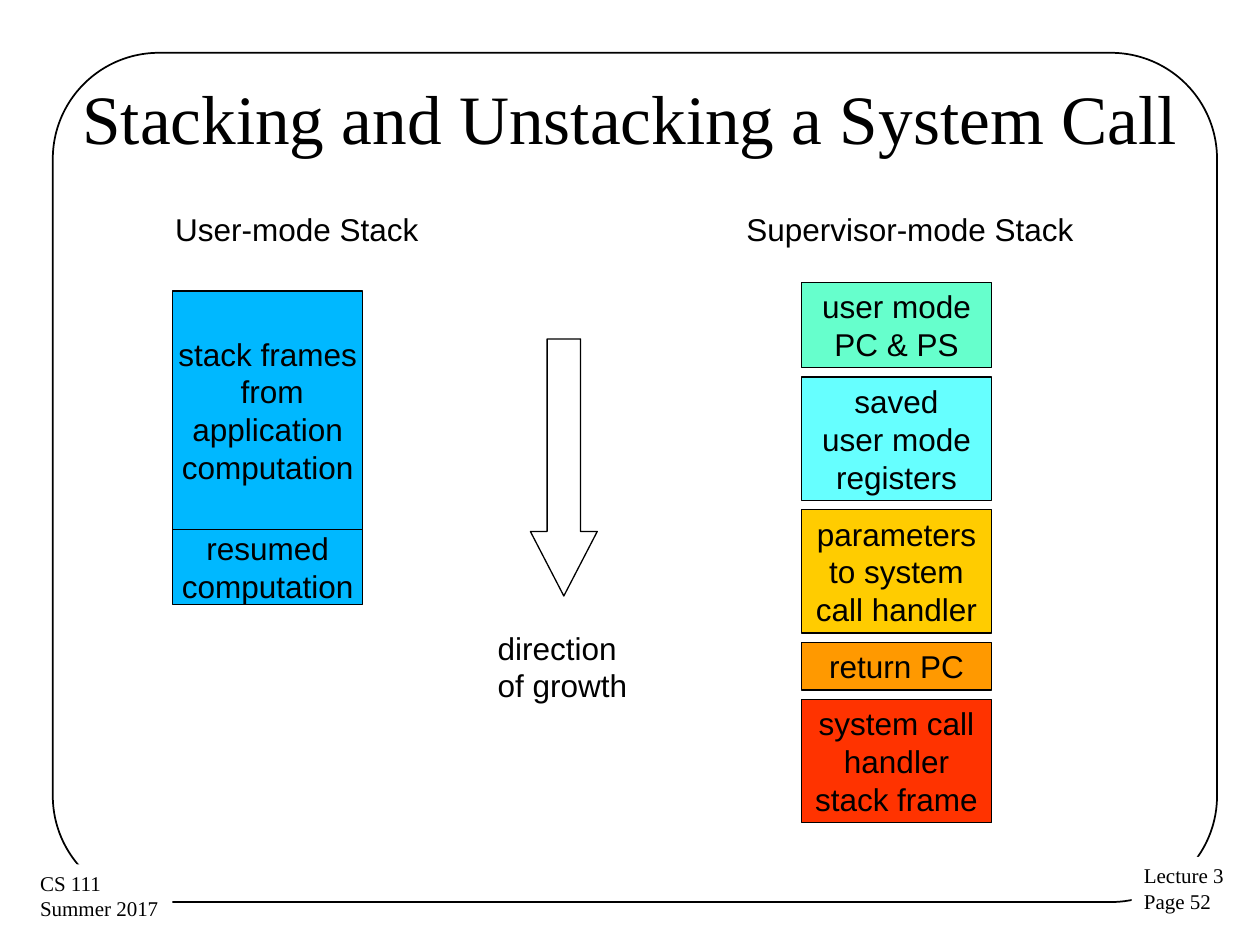
from dataclasses import dataclass

from pptx import Presentation
from pptx.dml.color import RGBColor
from pptx.enum.shapes import MSO_SHAPE
from pptx.enum.text import MSO_ANCHOR, MSO_AUTO_SIZE, PP_ALIGN
from pptx.util import Pt


@dataclass(frozen=True)
class Theme:
    ink: str = "000000"
    paper: str = "FFFFFF"
    user: str = "00B8FF"
    saved_state: str = "66FFCC"
    registers: str = "66FFFF"
    parameters: str = "FFCC00"
    return_address: str = "FF9900"
    handler: str = "FF3300"
    serif: str = "Times New Roman"
    sans: str = "Arial"
    title_size: float = 39.6
    body_size: float = 18
    footer_size: float = 12


THEME = Theme()
LINE_HEIGHT = 21.6
BLOCK_PADDING = 5.6
BLOCK_GAP = 5.4
BLOCK_WIDTH = 108.7


def write_text(shape, lines, size, font=THEME.sans, align=PP_ALIGN.LEFT,
               anchor=MSO_ANCHOR.TOP, wrap=False, side=6.5):
    """Fill a shape with one paragraph per line, all in the same format."""
    frame = shape.text_frame
    frame.text = "\n".join(lines)
    frame_format = {
        "auto_size": MSO_AUTO_SIZE.NONE, "word_wrap": wrap,
        "vertical_anchor": anchor,
        "margin_left": Pt(side), "margin_right": Pt(side),
        "margin_top": Pt(3.6), "margin_bottom": Pt(3.6),
    }
    for name, value in frame_format.items():
        setattr(frame, name, value)
    for paragraph in frame.paragraphs:
        paragraph.alignment = align
        for name, value in {"name": font, "size": Pt(size)}.items():
            setattr(paragraph.font, name, value)
        paragraph.font.color.rgb = RGBColor.from_string(THEME.ink)


def add_outline(slide, kind, box, fill=None, line_width=0.75):
    """Add a preset shape; no fill or a zero line width leaves that part out."""
    shape = slide.shapes.add_shape(kind, *map(Pt, box))
    shape.shadow.inherit = False
    if fill:
        shape.fill.solid()
        shape.fill.fore_color.rgb = RGBColor.from_string(fill)
    else:
        shape.fill.background()
    if line_width:
        shape.line.width = Pt(line_width)
        shape.line.color.rgb = RGBColor.from_string(THEME.ink)
    else:
        shape.line.fill.background()
    return shape


def add_label(slide, box, lines):
    label = slide.shapes.add_textbox(*map(Pt, box))
    write_text(label, lines, THEME.body_size)


def add_footer(slide, box, lines):
    footer = add_outline(slide, MSO_SHAPE.RECTANGLE, box, THEME.paper, 0)
    write_text(footer, lines, THEME.footer_size, THEME.serif, side=7.2)


def add_block(slide, left, top, height, fill, lines):
    block = add_outline(slide, MSO_SHAPE.RECTANGLE,
                        (left, top, BLOCK_WIDTH, height), fill)
    write_text(block, lines, THEME.body_size, align=PP_ALIGN.CENTER,
               anchor=MSO_ANCHOR.MIDDLE)


def add_user_stack(slide, left, top):
    blocks = [
        (136.1, ["stack frames", " from", "application", "computation"]),
        (2 * LINE_HEIGHT, ["resumed", "computation"]),
    ]
    for height, lines in blocks:
        add_block(slide, left, top, height, THEME.user, lines)
        top += height


def add_supervisor_stack(slide, left, top):
    blocks = [
        (THEME.saved_state, ["user mode", "PC & PS"]),
        (THEME.registers, ["saved", "user mode", "registers"]),
        (THEME.parameters, ["parameters", "to system", "call handler"]),
        (THEME.return_address, ["return PC"]),
        (THEME.handler, ["system call", "handler", "stack frame"]),
    ]
    for fill, lines in blocks:
        height = len(lines) * LINE_HEIGHT + BLOCK_PADDING
        add_block(slide, left, top, height, fill, lines)
        top += height + BLOCK_GAP


def set_title(slide, box, text):
    title = slide.shapes.title
    for name, value in zip(("left", "top", "width", "height"), box):
        setattr(title, name, Pt(value))
    write_text(title, [text], THEME.title_size, THEME.serif,
               PP_ALIGN.CENTER, MSO_ANCHOR.MIDDLE, wrap=True)


def main():
    presentation = Presentation()
    presentation.slide_width, presentation.slide_height = Pt(720), Pt(540)
    slide = presentation.slides.add_slide(presentation.slide_layouts[5])

    # Page frame, broken by the two footers
    page_frame = add_outline(slide, MSO_SHAPE.ROUNDED_RECTANGLE,
                             (30.2, 30.2, 665.3, 485.3), line_width=1)
    page_frame.adjustments[0] = 0.125
    add_footer(slide, (646.6, 489.6, 60.5, 36.7), ["Lecture 3", "Page 52"])
    add_footer(slide, (15.8, 493.9, 82.8, 36.7), ["CS 111", "Summer 2017"])

    set_title(slide, (36, 21.6, 648, 90), "Stacking and Unstacking a System Call")

    # The two stacks with their headings
    add_label(slide, (93.6, 116.6, 153.4, 28.1), ["User-mode Stack"])
    add_user_stack(slide, 98.6, 166.3)
    add_label(slide, (420, 116.6, 201.6, 28.1), ["Supervisor-mode Stack"])
    add_supervisor_stack(slide, 457.9, 161.3)

    # Direction of growth
    arrow = add_outline(slide, MSO_SHAPE.DOWN_ARROW, (303.1, 193.7, 38.2, 146.9))
    arrow.adjustments[0], arrow.adjustments[1] = 0.5, 0.964
    add_label(slide, (277.9, 355.7, 87.8, 50.4), ["direction", "of growth"])

    presentation.save("out.pptx")


if __name__ == "__main__":
    main()
